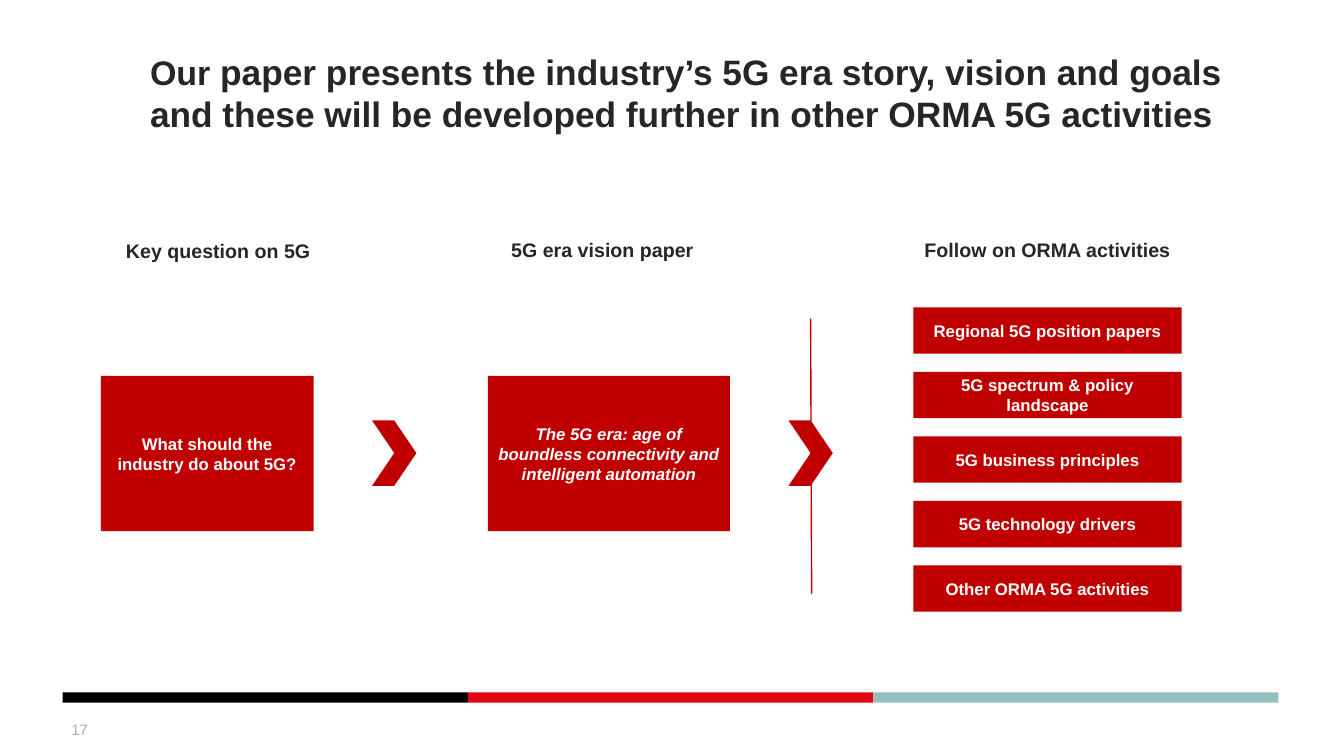
import pptx
import pptx.util
import pptx.dml.color
import pptx.enum.shapes
import pptx.enum.text
import pptx.oxml.ns
import lxml.etree

Inches = pptx.util.Inches
Kind = pptx.enum.shapes.MSO_SHAPE
Align = pptx.enum.text.PP_ALIGN
Anchor = pptx.enum.text.MSO_ANCHOR

RED, INK, WHITE, GREY = "C00000", "262626", "FFFFFF", "AEAEAE"
TITLE = [
    ("Our", 24.3),
    (" paper presents the industry’s 5G era story, vision and goals "
     "and these will be developed further in other ORMA 5G activities", 25.2),
]
HEADS = [
    ("Key question on 5G", 1.13, 2.32, 2.07),
    ("5G era vision paper", 4.94, 2.31, 2.07),
    ("Follow on ORMA activities", 9.06, 2.31, 2.66),
]
CARDS = [
    ("What should the industry do about 5G?", 1, 2.11, False),
    ("The 5G era: age of boundless connectivity and intelligent automation",
     4.84, 2.4, True),
]
TASKS = [
    "Regional 5G position papers",
    "5G spectrum & policy landscape",
    "5G business principles",
    "5G technology drivers",
    "Other ORMA 5G activities",
]
ARROWS = [3.69, 7.82]
BANDS = ["000000", "E30613", "94BFBD"]


def paint(color, code):
    color.rgb = pptx.dml.color.RGBColor.from_string(code)


def write(shape, runs, code, bold=True, slant=False, align=Align.CENTER,
          anchor=Anchor.MIDDLE, side=0.1):
    frame = shape.text_frame
    frame.word_wrap = True
    frame.vertical_anchor = anchor
    frame.margin_left = frame.margin_right = Inches(side)
    para = frame.paragraphs[0]
    para.alignment = align
    for text, size in runs:
        run = para.add_run()
        run.text = text
        run.font.name = "Arial"
        run.font.size = pptx.util.Pt(size)
        run.font.bold = bold
        run.font.italic = slant
        paint(run.font.color, code)


def block(kind, left, top, width, height, code):
    shape = slide.shapes.add_shape(
        kind, Inches(left), Inches(top), Inches(width), Inches(height))
    shape.shadow.inherit = False
    shape.fill.solid()
    paint(shape.fill.fore_color, code)
    shape.line.fill.background()
    return shape


def label(left, top, width, height, runs, code, **style):
    box = slide.shapes.add_textbox(
        Inches(left), Inches(top), Inches(width), Inches(height))
    write(box, runs, code, **style)


deck = pptx.Presentation()
deck.slide_width, deck.slide_height = Inches(13.33), Inches(7.5)
slide = deck.slides.add_slide(deck.slide_layouts[6])

for i, code in enumerate(BANDS):
    block(Kind.RECTANGLE, 0.62 + i * 4.02, 6.87, 4.02, 0.1, code)

label(1.39, 0.52, 11.07, 0.8, TITLE, INK, align=Align.LEFT)
label(0.61, 7.04, 3.11, 0.4, [("17", 10.7)], GREY, bold=False, align=Align.LEFT)

for text, left, top, width in HEADS:
    label(left, top, width, 0.34, [(text, 14)], INK, anchor=Anchor.TOP, side=0.08)

for text, left, width, slant in CARDS:
    card = block(Kind.RECTANGLE, left, 3.73, width, 1.54, RED)
    write(card, [(text, 12)], WHITE, slant=slant, side=0.08)

for i, text in enumerate(TASKS):
    bar = block(Kind.RECTANGLE, 9.06, 3.05 + i * 0.64, 2.66, 0.46, RED)
    write(bar, [(text, 12)], WHITE)

line = slide.shapes.add_connector(
    pptx.enum.shapes.MSO_CONNECTOR.STRAIGHT,
    Inches(8.04), Inches(3.16), Inches(8.05), Inches(5.89))
paint(line.line.color, RED)
line.line.width = pptx.util.Pt(1)
lxml.etree.SubElement(line._element.spPr, pptx.oxml.ns.qn("a:effectLst"))

for left in ARROWS:
    block(Kind.CHEVRON, left, 4.17, 0.44, 0.65, RED)

deck.save("out.pptx")
